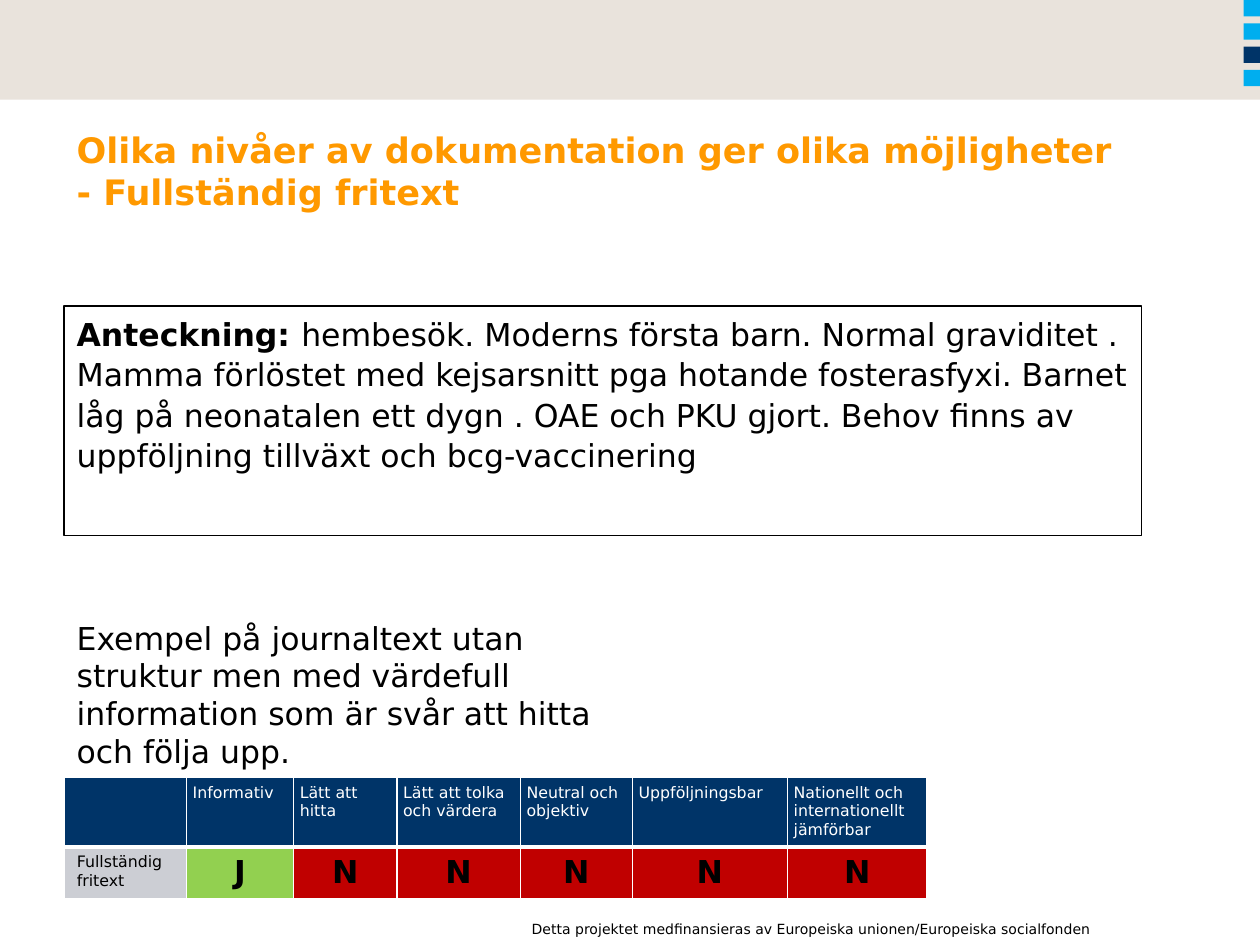
from lxml.etree import SubElement
from pptx import Presentation
from pptx.dml.color import RGBColor
from pptx.enum.shapes import MSO_SHAPE
from pptx.enum.text import MSO_ANCHOR, PP_ALIGN
from pptx.oxml.ns import qn
from pptx.util import Inches, Pt

BLACK = RGBColor(0x00, 0x00, 0x00)
WHITE = RGBColor(0xFF, 0xFF, 0xFF)
SAND = RGBColor(0xE9, 0xE3, 0xDC)
CYAN = RGBColor(0x00, 0xAE, 0xEF)
NAVY = RGBColor(0x00, 0x34, 0x68)
ORANGE = RGBColor(0xFF, 0x99, 0x00)
GREY = RGBColor(0xCC, 0xCE, 0xD4)
GREEN = RGBColor(0x92, 0xD0, 0x50)
RED = RGBColor(0xC0, 0x00, 0x00)

FONT = "DejaVu Sans"
CRITERIA = [
    "Informativ",
    "Lätt att hitta",
    "Lätt att tolka och värdera",
    "Neutral och objektiv",
    "Uppföljningsbar",
    "Nationellt och internationellt jämförbar",
]
GRADES = ["J", "N", "N", "N", "N", "N"]
GRADE_FILLS = {"J": GREEN, "N": RED}
COLUMN_WIDTHS = [0.97, 0.85, 0.82, 0.98, 0.89, 1.23, 1.11]
ROW_HEIGHTS = [0.55, 0.41]


def add_text(paragraph, text, size=18, color=BLACK, bold=False, align=PP_ALIGN.LEFT):
    paragraph.alignment = align
    for index, line in enumerate(text.split("\n")):
        if index:
            paragraph.add_line_break()
        run = paragraph.add_run()
        run.text = line
        run.font.name = FONT
        run.font.size = Pt(size)
        run.font.bold = bold
        run.font.color.rgb = color


class SlideBuilder:
    """Holds the slide and adds its elements in one common style."""

    def __init__(self, slide):
        self.slide = slide

    def rectangle(self, left, top, width, height, fill=None, line=None):
        shape = self.slide.shapes.add_shape(
            MSO_SHAPE.RECTANGLE, Inches(left), Inches(top), Inches(width), Inches(height)
        )
        shape.shadow.inherit = False
        if fill is None:
            shape.fill.background()
        else:
            shape.fill.solid()
            shape.fill.fore_color.rgb = fill
        if line is None:
            shape.line.fill.background()
        else:
            shape.line.color.rgb = line
            shape.line.width = Pt(1)
        shape.text_frame.word_wrap = True
        shape.text_frame.vertical_anchor = MSO_ANCHOR.TOP
        return shape

    def text_box(self, left, top, width, height, text, **text_format):
        shape = self.slide.shapes.add_textbox(
            Inches(left), Inches(top), Inches(width), Inches(height)
        )
        shape.text_frame.word_wrap = True
        add_text(shape.text_frame.paragraphs[0], text, **text_format)

    def table(self, left, top, widths, heights):
        frame = self.slide.shapes.add_table(
            len(heights), len(widths), Inches(left), Inches(top),
            Inches(sum(widths)), Inches(sum(heights)),
        )
        for column, width in zip(frame.table.columns, widths):
            column.width = Inches(width)
        for row, height in zip(frame.table.rows, heights):
            row.height = Inches(height)
        return frame.table

    def cell(self, cell, text, fill, thick_side, side_margin=0.05,
             anchor=MSO_ANCHOR.TOP, **text_format):
        cell.margin_left = cell.margin_right = Inches(side_margin)
        cell.margin_top = cell.margin_bottom = Inches(0.05)
        cell.vertical_anchor = anchor
        properties = cell._tc.get_or_add_tcPr()
        for side in ("lnL", "lnR", "lnT", "lnB"):
            width = Pt(3 if side == thick_side else 1)
            border = SubElement(properties, qn(f"a:{side}"), w=str(width))
            solid = SubElement(border, qn("a:solidFill"))
            SubElement(solid, qn("a:srgbClr"), val=str(WHITE))
        cell.fill.solid()
        cell.fill.fore_color.rgb = fill
        if text:
            add_text(cell.text_frame.paragraphs[0], text, **text_format)


def main():
    presentation = Presentation()
    presentation.slide_width = Inches(10)
    presentation.slide_height = Inches(7.5)
    builder = SlideBuilder(presentation.slides.add_slide(presentation.slide_layouts[6]))

    builder.rectangle(0, 0, 10, 0.79, fill=SAND)
    for index, color in enumerate([CYAN, CYAN, NAVY, CYAN]):
        builder.rectangle(9.87, index * 0.185, 0.13, 0.13, fill=color)

    builder.text_box(
        4.01, 7.26, 4.75, 0.24,
        "Detta projektet medfinansieras av Europeiska unionen/Europeiska socialfonden",
        size=8, align=PP_ALIGN.RIGHT,
    )
    builder.text_box(
        0.51, 0.97, 9, 1.25,
        "Olika nivåer av dokumentation ger olika möjligheter\n- Fullständig fritext",
        size=20, color=ORANGE, bold=True,
    )

    note = builder.rectangle(0.51, 2.43, 8.55, 1.82, line=BLACK)
    paragraph = note.text_frame.paragraphs[0]
    paragraph.line_spacing = 1.07
    add_text(paragraph, "Anteckning: ", bold=True)
    add_text(
        paragraph,
        "hembesök. Moderns första barn. Normal graviditet . Mamma förlöstet med "
        "kejsarsnitt pga hotande fosterasfyxi. Barnet låg på neonatalen ett dygn . "
        "OAE och PKU gjort. Behov finns av uppföljning tillväxt och bcg-vaccinering",
    )

    builder.text_box(
        0.51, 4.86, 4.42, 1.31,
        "Exempel på journaltext utan struktur men med värdefull information "
        "som är svår att hitta och följa upp.",
    )

    table = builder.table(0.51, 6.17, COLUMN_WIDTHS, ROW_HEIGHTS)
    for column, heading in enumerate([""] + CRITERIA):
        builder.cell(table.cell(0, column), heading, NAVY, "lnB", size=9, color=WHITE)
    builder.cell(table.cell(1, 0), "Fullständig fritext", GREY, "lnT", side_margin=0.1, size=9)
    for column, grade in enumerate(GRADES, start=1):
        builder.cell(
            table.cell(1, column), grade, GRADE_FILLS[grade], "lnT", side_margin=0.1,
            anchor=MSO_ANCHOR.MIDDLE, bold=True, align=PP_ALIGN.CENTER,
        )

    presentation.save("out.pptx")


if __name__ == "__main__":
    main()
